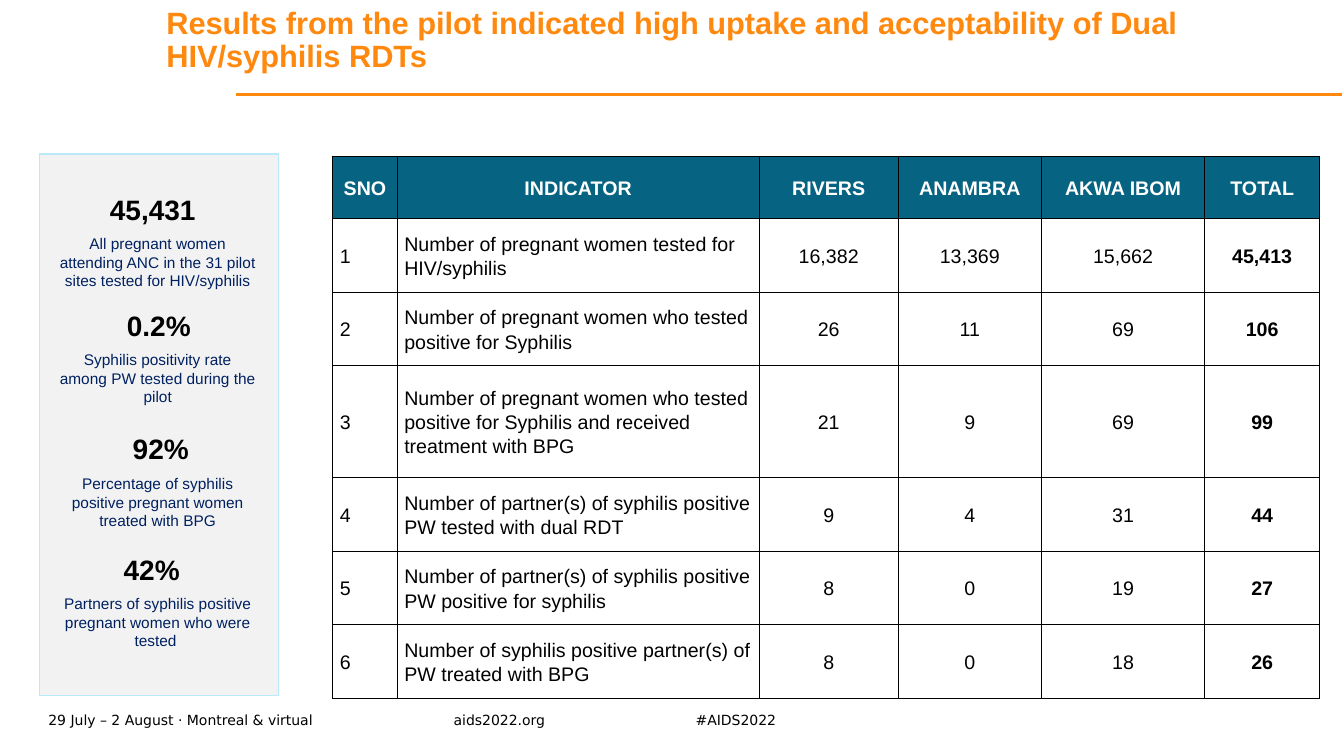
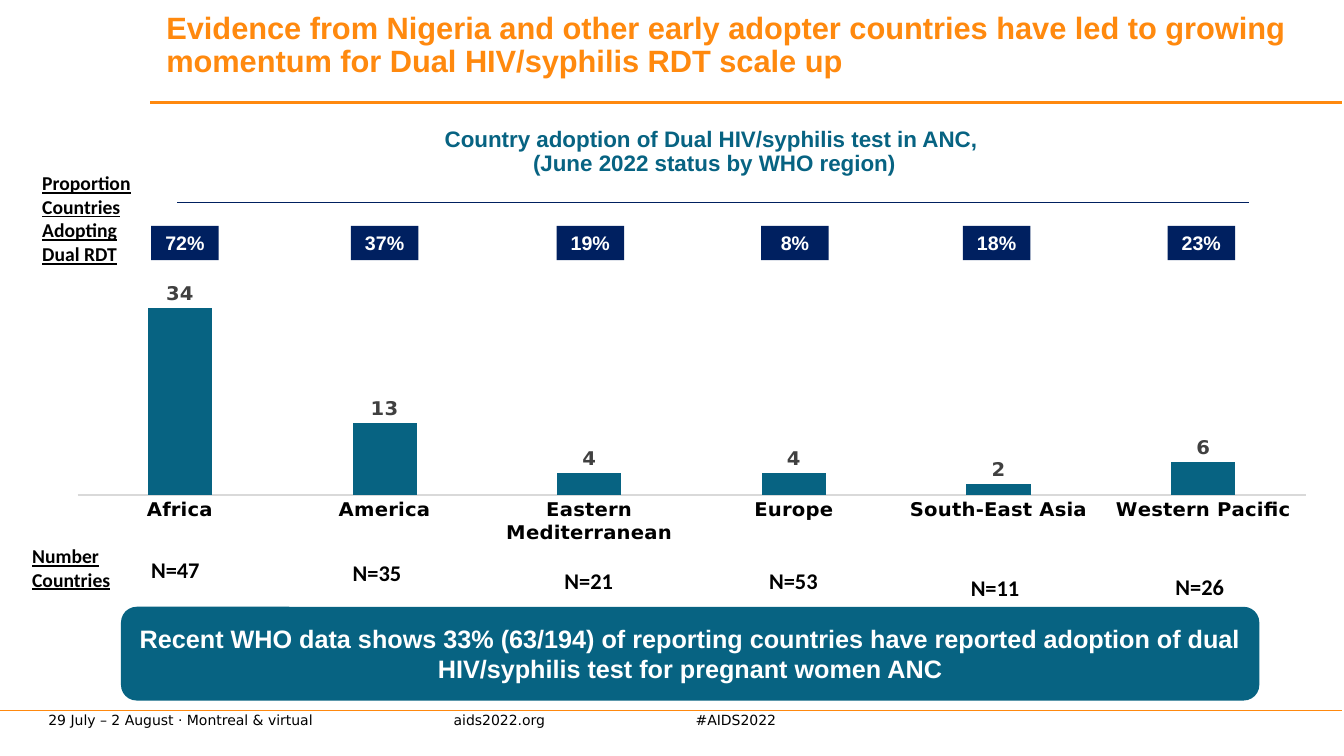
import pptx
import pptx.chart.data
import pptx.dml.color
import pptx.enum.chart
import pptx.enum.shapes
import pptx.enum.text
import pptx.oxml
import pptx.oxml.ns
import pptx.util
from pptx.util import Inches

ALIGN = pptx.enum.text.PP_ALIGN
ANCHOR = pptx.enum.text.MSO_ANCHOR
SHAPE = pptx.enum.shapes.MSO_SHAPE

COLORS = {
    "orange": "FF890E", "teal": "076382", "navy": "002060", "black": "000000",
    "white": "FFFFFF", "panel": "F2F2F2", "panel_edge": "B8EAFB",
    "axis": "D9D9D9", "value_label": "404040",
}
FOOTER = [(0.48, 4.02, "29 July – 2 August · Montreal & virtual"),
          (4.5, 1.93, "aids2022.org"), (6.9, 1.93, "#AIDS2022")]

# number, left and top of the number, caption, top of the caption
KEY_FIGURES = [
    ("45,431", 0.96, 1.86, "All pregnant women attending ANC in the 31 pilot sites tested for HIV/syphilis", 2.28),
    ("0.2%", 1.02, 3.01, "Syphilis positivity rate among PW tested during the pilot", 3.43),
    ("92%", 1.04, 4.23, "Percentage of syphilis positive pregnant women treated with BPG", 4.66),
    ("42%", 0.95, 5.43, "Partners of syphilis positive pregnant women who were tested ", 5.85),
]
COLUMN_WIDTHS = [0.64, 3.59, 1.38, 1.42, 1.62, 1.14]
ROW_HEIGHTS = [0.62, 0.73, 0.73, 1.11, 0.73, 0.73, 0.73]
INDICATORS = [
    ("SNO", "INDICATOR", "RIVERS", "ANAMBRA", "AKWA IBOM", "TOTAL"),
    ("1", "Number of pregnant women tested for HIV/syphilis", "16,382", "13,369", "15,662", "45,413"),
    ("2", "Number of pregnant women who tested positive for Syphilis", "26", "11", "69", "106"),
    ("3", "Number of pregnant women who tested positive for Syphilis and received treatment with BPG",
     "21", "9", "69", "99"),
    ("4", "Number of partner(s) of syphilis positive PW tested with dual RDT", "9", "4", "31", "44"),
    ("5", "Number of partner(s) of syphilis positive PW positive for syphilis", "8", "0", "19", "27"),
    ("6", "Number of syphilis positive partner(s) of PW treated with BPG", "8", "0", "18", "26"),
]
# region, adopting countries, share, left of share, total, left and top of total
REGIONS = [
    ("Africa", 34, "72%", 1.5, "N=47", 1.4, 5.47),
    ("America", 13, "37%", 3.48, "N=35", 3.4, 5.5),
    ("Eastern Mediterranean", 4, "19%", 5.52, "N=21", 5.5, 5.58),
    ("Europe", 4, "8%", 7.55, "N=53", 7.53, 5.58),
    ("South-East Asia", 2, "18%", 9.55, "N=11", 9.53, 5.65),
    ("Western Pacific", 6, "23%", 11.58, "N=26", 11.56, 5.64),
]


def rgb(name):
    return pptx.dml.color.RGBColor.from_string(COLORS[name])


def style_font(font, size, color, bold=False, face="Arial", underline=None):
    font.size = pptx.util.Pt(size)
    font.name = face
    font.bold = bold
    font.underline = underline
    font.color.rgb = rgb(color)


def write(frame, text, size, color, align=ALIGN.LEFT, anchor=ANCHOR.TOP,
          spacing=None, margin=None, **font):
    """Fill a text frame, one paragraph per line of text."""
    frame.word_wrap = True
    frame.vertical_anchor = anchor
    if margin is not None:
        frame.margin_left = frame.margin_right = Inches(margin)
        frame.margin_top = frame.margin_bottom = 0
    for index, line in enumerate(text.split("\n")):
        paragraph = frame.add_paragraph() if index else frame.paragraphs[0]
        paragraph.text = line
        paragraph.alignment = align
        paragraph.line_spacing = spacing
        style_font(paragraph.font, size, color, **font)


def add_text(slide, box, text, size, color, **style):
    write(slide.shapes.add_textbox(*map(Inches, box)).text_frame, text, size, color, **style)


def add_block(slide, box, fill, kind=SHAPE.RECTANGLE, edge=None):
    block = slide.shapes.add_shape(kind, *map(Inches, box))
    block.shadow.inherit = False
    block.fill.solid()
    block.fill.fore_color.rgb = rgb(fill)
    if edge:
        block.line.color.rgb = rgb(edge)
        block.line.width = pptx.util.Pt(1)
    else:
        block.line.fill.background()
    return block


def add_rule(slide, left, right, y, color, width):
    rule = slide.shapes.add_connector(pptx.enum.shapes.MSO_CONNECTOR.STRAIGHT,
                                      Inches(left), Inches(y), Inches(right), Inches(y))
    rule.line.color.rgb = rgb(color)
    rule.line.width = pptx.util.Pt(width)
    properties = rule._element.spPr
    properties.append(properties.makeelement(pptx.oxml.ns.qn("a:effectLst"), {}))


def add_base_slide(deck, title, title_top, title_width, rule_left, rule_y):
    """Add a slide with the shared footer, title and orange rule."""
    slide = deck.slides.add_slide(deck.slide_layouts[6])
    for left, width, text in FOOTER:
        add_text(slide, (left, 7.02, width, 0.24), text, 10, "black",
                 face="DejaVu Sans", anchor=ANCHOR.MIDDLE, margin=0)
    add_text(slide, (1.65, title_top, title_width, 0.81), title, 22, "orange",
             bold=True, spacing=0.9, margin=0)
    add_rule(slide, rule_left, 13.31, rule_y, "orange", 2.25)
    return slide


def add_borders(cell):
    properties = cell._tc.get_or_add_tcPr()
    for index, side in enumerate(("lnL", "lnR", "lnT", "lnB")):
        properties.insert(index, pptx.oxml.parse_xml(
            f'<a:{side} {pptx.oxml.ns.nsdecls("a")} w="12700"><a:solidFill>'
            f'<a:srgbClr val="{COLORS["black"]}"/></a:solidFill></a:{side}>'))


def add_indicator_table(slide):
    table = slide.shapes.add_table(
        len(ROW_HEIGHTS), len(COLUMN_WIDTHS), Inches(3.3), Inches(1.55),
        Inches(sum(COLUMN_WIDTHS)), Inches(sum(ROW_HEIGHTS))).table
    for column, width in zip(table.columns, COLUMN_WIDTHS):
        column.width = Inches(width)
    for row, height in zip(table.rows, ROW_HEIGHTS):
        row.height = Inches(height)
    last = len(COLUMN_WIDTHS) - 1
    for r, values in enumerate(INDICATORS):
        for c, value in enumerate(values):
            cell = table.cell(r, c)
            header = r == 0
            cell.fill.solid()
            cell.fill.fore_color.rgb = rgb("teal" if header else "white")
            cell.vertical_anchor = ANCHOR.MIDDLE
            cell.margin_left = cell.margin_right = Inches(0.07)
            cell.margin_top = cell.margin_bottom = 0
            paragraph = cell.text_frame.paragraphs[0]
            paragraph.text = value
            paragraph.alignment = ALIGN.CENTER if header or c > 1 else ALIGN.LEFT
            paragraph.line_spacing = 1.1
            if not header and c > 1:
                paragraph.space_after = pptx.util.Pt(10)
            style_font(paragraph.font, 14, "white" if header else "black", header or c == last)
            add_borders(cell)


def add_key_figure(slide, number, left, top, caption, caption_top):
    block = add_block(slide, (0.48, caption_top, 2.17, 0.64), "panel")
    write(block.text_frame, caption, 11, "navy", align=ALIGN.CENTER, anchor=ANCHOR.MIDDLE)
    add_text(slide, (left, top, 1.11, 0.44), number, 20, "black", bold=True, align=ALIGN.CENTER)


def add_side_label(slide, box, text):
    write(add_block(slide, box, "white").text_frame, text, 14, "black",
          align=ALIGN.JUSTIFY, bold=True, underline=True, face="Calibri")


def set_plot_area(chart, x, y, w, h):
    plot_area = chart._chartSpace.chart.plotArea
    for layout in plot_area.findall(pptx.oxml.ns.qn("c:layout")):
        plot_area.remove(layout)
    sizes = "".join(f'<c:{key} val="{value}"/>' for key, value in zip("xywh", (x, y, w, h)))
    plot_area.insert(0, pptx.oxml.parse_xml(
        f'<c:layout {pptx.oxml.ns.nsdecls("c")}><c:manualLayout><c:layoutTarget val="inner"/>'
        f'<c:xMode val="edge"/><c:yMode val="edge"/>{sizes}</c:manualLayout></c:layout>'))


def add_adoption_chart(slide):
    data = pptx.chart.data.CategoryChartData()
    data.categories = [region[0] for region in REGIONS]
    data.add_series("Series 1", [region[1] for region in REGIONS])
    chart = slide.shapes.add_chart(
        pptx.enum.chart.XL_CHART_TYPE.COLUMN_CLUSTERED,
        *map(Inches, (0.62, 2.33, 12.48, 3.06)), data).chart
    chart.has_legend = chart.has_title = False
    style_font(chart.font, 10, "black", face="DejaVu Sans")
    set_plot_area(chart, 0.012, 0.135, 0.976, 0.743)

    chart.value_axis.visible = False
    chart.value_axis.has_major_gridlines = False
    chart.value_axis.minimum_scale = 0
    chart.value_axis.maximum_scale = 40
    axis = chart.category_axis
    axis.major_tick_mark = pptx.enum.chart.XL_TICK_MARK.NONE
    axis.format.line.color.rgb = rgb("axis")
    axis.format.line.width = pptx.util.Pt(0.75)
    style_font(axis.tick_labels.font, 14, "black", True, "DejaVu Sans")

    plot = chart.plots[0]
    plot.gap_width = 219
    plot.overlap = -27
    plot.vary_by_categories = False
    countries = plot.series[0]
    countries.format.fill.solid()
    countries.format.fill.fore_color.rgb = rgb("teal")
    labels = countries.data_labels
    labels.show_value = True
    labels.position = pptx.enum.chart.XL_LABEL_POSITION.OUTSIDE_END
    style_font(labels.font, 14, "value_label", True, "DejaVu Sans")


def build_pilot_results(deck):
    slide = add_base_slide(
        deck, "Results from the pilot indicated high uptake and acceptability of Dual HIV/syphilis RDTs",
        0.08, 11.43, 2.34, 0.94)
    add_block(slide, (0.39, 1.53, 2.37, 5.37), "panel", edge="panel_edge")
    add_indicator_table(slide)
    for figure in KEY_FIGURES:
        add_key_figure(slide, *figure)


def build_country_adoption(deck):
    slide = add_base_slide(
        deck, "Evidence from Nigeria and other early adopter countries have led to growing "
        "momentum for Dual HIV/syphilis RDT scale up", 0.13, 11.68, 1.49, 1.02)
    add_rule(slide, 0, 13.31, 7.05, "orange", 0.5)
    add_side_label(slide, (0.22, 5.35, 0.98, 0.57), "Number Countries")
    add_side_label(slide, (0.32, 1.65, 1.18, 1.04), "Proportion Countries Adopting Dual RDT")
    for _, _, share, share_left, total, total_left, total_top in REGIONS:
        badge = add_block(slide, (share_left, 2.24, 0.67, 0.34), "navy")
        write(badge.text_frame, share, 14, "white", align=ALIGN.CENTER, bold=True)
        add_text(slide, (total_left, total_top, 0.71, 0.37), total, 16, "black",
                 bold=True, face="Calibri")
    add_adoption_chart(slide)
    add_rule(slide, 1.76, 12.39, 2.01, "navy", 0.75)
    add_text(slide, (1.68, 1.22, 10.81, 0.59),
             "Country adoption of Dual HIV/syphilis test in ANC, \n(June 2022 status by WHO region)",
             16, "teal", bold=True, align=ALIGN.CENTER, spacing=0.9)
    takeaway = add_block(slide, (1.2, 6.02, 11.29, 0.93), "teal", SHAPE.ROUNDED_RECTANGLE)
    write(takeaway.text_frame,
          "Recent WHO data shows 33% (63/194) of reporting countries have reported adoption "
          "of dual HIV/syphilis test for pregnant women ANC",
          18, "white", align=ALIGN.CENTER, anchor=ANCHOR.MIDDLE, bold=True)


def main():
    deck = pptx.Presentation()
    deck.slide_width = Inches(13.33)
    deck.slide_height = Inches(7.5)
    build_pilot_results(deck)
    build_country_adoption(deck)
    deck.save("out.pptx")


if __name__ == "__main__":
    main()
